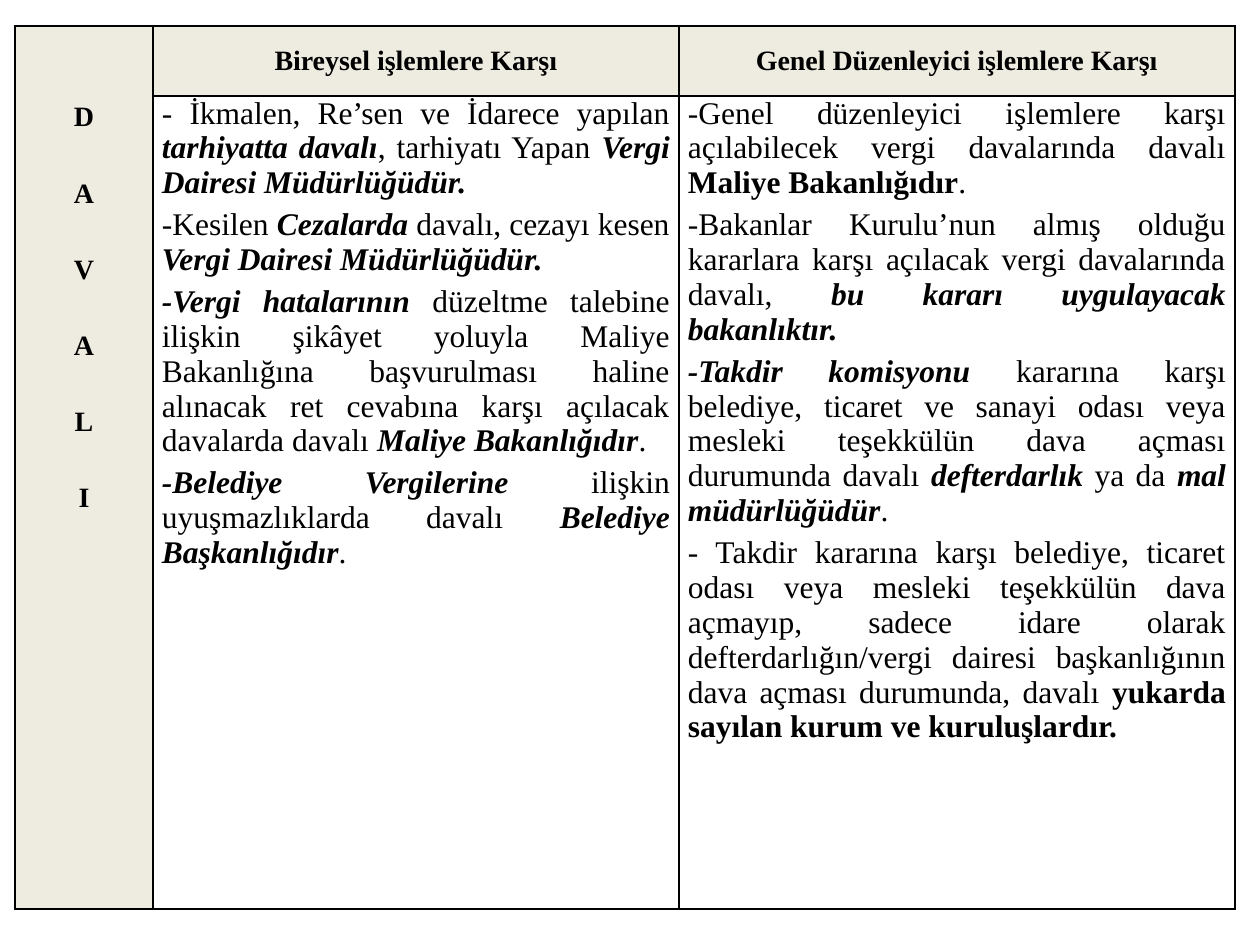
from dataclasses import dataclass
from lxml import etree
from pptx import Presentation
from pptx.dml.color import RGBColor
from pptx.enum.text import MSO_ANCHOR, PP_ALIGN
from pptx.oxml.ns import qn
from pptx.util import Emu, Pt

CENTER, JUSTIFY = PP_ALIGN.CENTER, PP_ALIGN.JUSTIFY
TOP, MIDDLE = MSO_ANCHOR.TOP, MSO_ANCHOR.MIDDLE
PLAIN, BOLD, STRONG = (False, False), (True, False), (True, True)


@dataclass(frozen=True)
class Theme:
    font: str = "Times New Roman"
    ink: str = "000000"
    shade: str = "EEECE1"
    heading: int = 16
    body: int = 18
    border: int = 1
    gap: int = 4
    letter_gap: float = 25.7


THEME = Theme()
SLIDE = (1260, 945)
ORIGIN = (15, 26)
COLUMNS = (138, 526, 556)
ROWS = (70, 813)
SIDE_MARGIN = 9
LETTERS_TOP = 76

SIDE_TITLE = "DAVALI"
HEADINGS = ("Bireysel işlemlere Karşı", "Genel Düzenleyici işlemlere Karşı")
BODIES = (
    [
        [("- İkmalen, Re’sen ve İdarece yapılan ", PLAIN),
         ("tarhiyatta davalı", STRONG),
         (", tarhiyatı Yapan ", PLAIN),
         ("Vergi Dairesi Müdürlüğüdür.", STRONG)],
        [("-Kesilen ", PLAIN),
         ("Cezalarda", STRONG),
         (" davalı, cezayı kesen ", PLAIN),
         ("Vergi Dairesi Müdürlüğüdür.", STRONG)],
        [("-Vergi hatalarının", STRONG),
         (" düzeltme talebine ilişkin şikâyet yoluyla Maliye Bakanlığına "
          "başvurulması haline alınacak ret cevabına karşı açılacak "
          "davalarda davalı ", PLAIN),
         ("Maliye Bakanlığıdır", STRONG),
         (".", PLAIN)],
        [("-Belediye Vergilerine", STRONG),
         (" ilişkin uyuşmazlıklarda davalı ", PLAIN),
         ("Belediye Başkanlığıdır", STRONG),
         (".", PLAIN)],
    ],
    [
        [("-Genel düzenleyici işlemlere karşı açılabilecek vergi "
          "davalarında davalı ", PLAIN),
         ("Maliye Bakanlığıdır", BOLD),
         (".", PLAIN)],
        [("-Bakanlar Kurulu’nun almış olduğu kararlara karşı açılacak "
          "vergi davalarında davalı, ", PLAIN),
         ("bu kararı uygulayacak bakanlıktır.", STRONG)],
        [("-Takdir komisyonu ", STRONG),
         ("kararına karşı belediye, ticaret ve sanayi odası veya mesleki "
          "teşekkülün dava açması durumunda davalı ", PLAIN),
         ("defterdarlık", STRONG),
         (" ya da ", PLAIN),
         ("mal müdürlüğüdür", STRONG),
         (".", PLAIN)],
        [("- Takdir kararına karşı belediye, ticaret odası veya mesleki "
          "teşekkülün dava açmayıp, sadece idare olarak "
          "defterdarlığın/vergi dairesi başkanlığının dava açması "
          "durumunda, davalı ", PLAIN),
         ("yukarda sayılan kurum ve kuruluşlardır.", BOLD)],
    ],
)


def px(length):
    return Emu(round(length * 914400 / 126))


def add_borders(cell):
    properties = cell._tc.get_or_add_tcPr()
    for side in ("a:lnL", "a:lnR", "a:lnT", "a:lnB"):
        line = etree.SubElement(properties, qn(side), w=str(Pt(THEME.border)))
        fill = etree.SubElement(line, qn("a:solidFill"))
        etree.SubElement(fill, qn("a:srgbClr"), val=THEME.ink)


def style_cell(cell, shaded):
    add_borders(cell)
    if shaded:
        cell.fill.solid()
        cell.fill.fore_color.rgb = RGBColor.from_string(THEME.shade)
    else:
        cell.fill.background()
    cell.margin_left = cell.margin_right = px(SIDE_MARGIN)
    cell.margin_top = cell.margin_bottom = 0


def write(cell, paragraphs, size, align, anchor=TOP, before=0, after=THEME.gap):
    cell.vertical_anchor = anchor
    frame = cell.text_frame
    for index, runs in enumerate(paragraphs):
        para = frame.add_paragraph() if index else frame.paragraphs[0]
        para.alignment = align
        para.space_before = Pt(0 if index else before)
        para.space_after = Pt(after)
        for text, (bold, italic) in runs:
            span = para.add_run()
            span.text = text
            span.font.name = THEME.font
            span.font.size = Pt(size)
            span.font.bold = bold
            span.font.italic = italic
            span.font.color.rgb = RGBColor.from_string(THEME.ink)


def main():
    deck = Presentation()
    deck.slide_width, deck.slide_height = map(px, SLIDE)
    page = deck.slides.add_slide(deck.slide_layouts[6])
    table = page.shapes.add_table(
        len(ROWS), len(COLUMNS), *map(px, (*ORIGIN, sum(COLUMNS), sum(ROWS)))
    ).table
    table.first_row = table.horz_banding = False
    for column, width in zip(table.columns, COLUMNS):
        column.width = px(width)
    for row, height in zip(table.rows, ROWS):
        row.height = px(height)
    for row in range(len(ROWS)):
        for column in range(len(COLUMNS)):
            style_cell(table.cell(row, column), row == 0 or column == 0)

    side = table.cell(0, 0)
    side.merge(table.cell(1, 0))
    side.margin_top = px(LETTERS_TOP)
    letters = [[(letter, BOLD)] for letter in SIDE_TITLE]
    write(side, letters, THEME.heading, CENTER, after=THEME.letter_gap)

    for column, (heading, body) in enumerate(zip(HEADINGS, BODIES), start=1):
        write(table.cell(0, column), [[(heading, BOLD)]], THEME.heading,
              CENTER, MIDDLE, before=THEME.gap)
        write(table.cell(1, column), body, THEME.body, JUSTIFY, before=2)

    deck.save("out.pptx")


if __name__ == "__main__":
    main()
